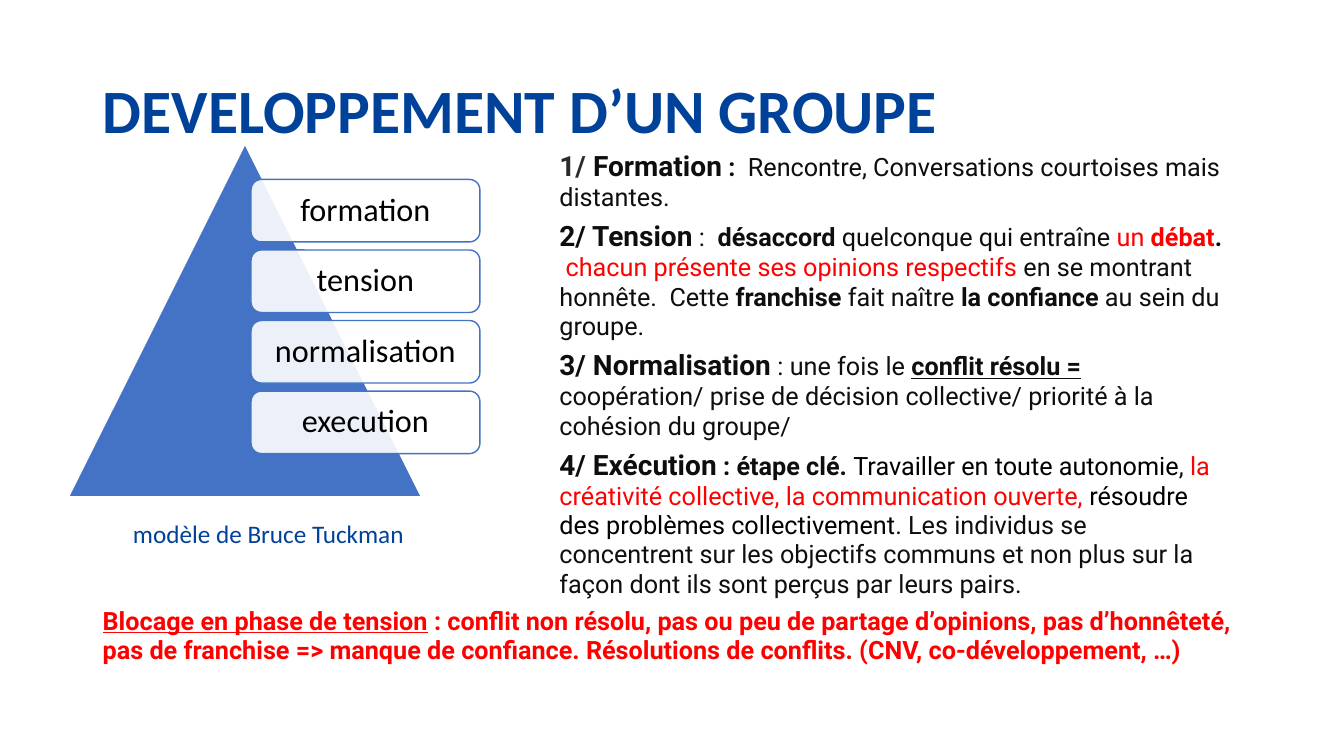
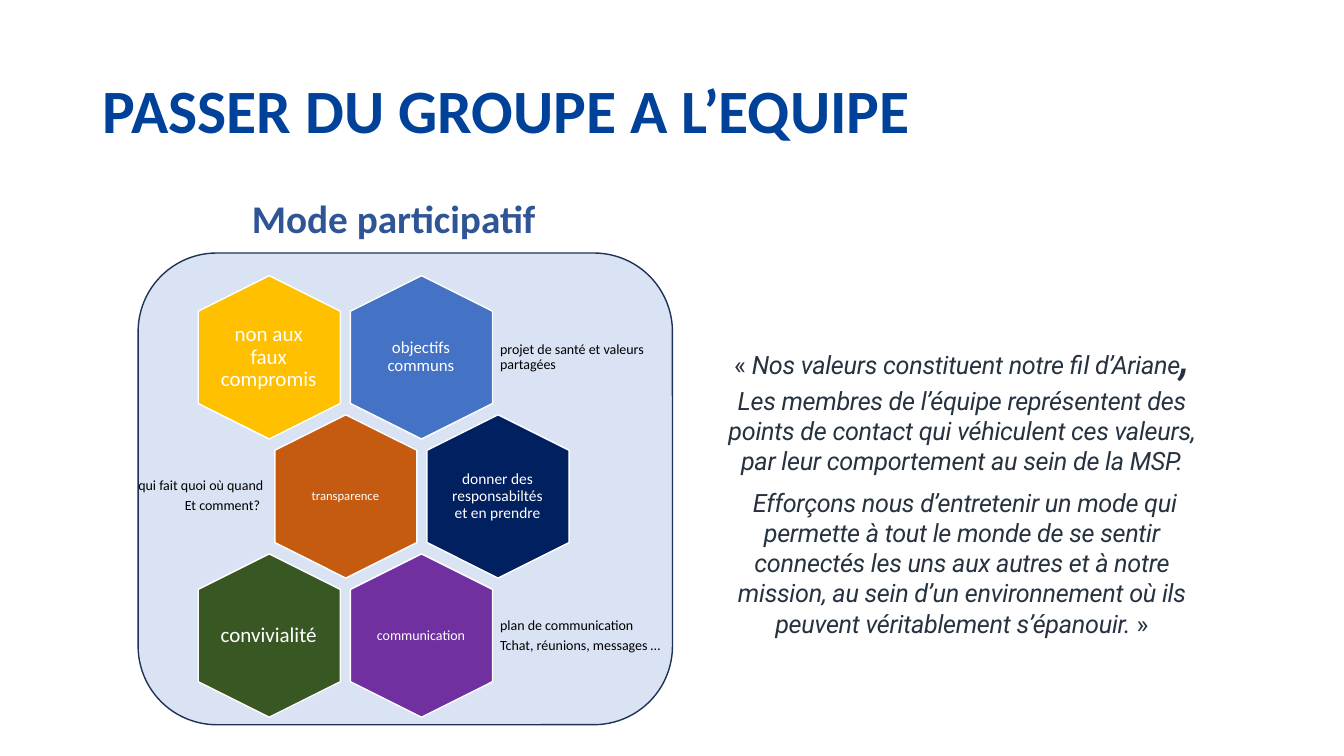
from lxml import etree
from pptx import Presentation
from pptx.dml.color import RGBColor
from pptx.enum.shapes import MSO_SHAPE
from pptx.enum.text import MSO_ANCHOR, MSO_AUTO_SIZE, PP_ALIGN
from pptx.oxml.ns import qn
from pptx.util import Inches, Pt

LEFT, MID, RIGHT = PP_ALIGN.LEFT, PP_ALIGN.CENTER, PP_ALIGN.RIGHT
TOP, CENTRE = MSO_ANCHOR.TOP, MSO_ANCHOR.MIDDLE
ROUND, HEX, PEAK = MSO_SHAPE.ROUNDED_RECTANGLE, MSO_SHAPE.HEXAGON, MSO_SHAPE.ISOSCELES_TRIANGLE

COLOR = {
    "title": "004199", "blue": "4472C4", "head": "2F5597", "white": "FFFFFF",
    "black": "000000", "ink": "0D0E10", "soft": "2A2B2C", "red": "FF0000",
    "slate": "273240", "pale": "DAE3F3", "edge": "1E3256", "gold": "FFC000",
    "rust": "C55A11", "navy": "002060", "plum": "7030A0", "green": "385723",
}
SANS, BODY = "Calibri", "Roboto"

# Content: a paragraph is a list of (text, style words)
PHASES = ["formation", "tension", "normalisation", "execution"]
MODEL = "modèle de Bruce Tuckman"
STEPS = [
    [("1/ ", "large bold soft"), ("Formation", "large bold"), (" :", "bold"),
     ("  Rencontre, Conversations courtoises mais distantes.", "")],
    [("2/ Tension", "large bold"), (" ", "bold"), (":  ", ""), ("désaccord ", "bold"),
     ("quelconque qui entraîne ", ""), ("un ", "red"), ("débat", "bold red"),
     (".  ", "bold"), ("chacun présente ses opinions respectifs ", "red"),
     ("en se montrant honnête.  Cette ", ""), ("franchise", "bold"),
     (" fait naître ", ""), ("la confiance", "bold"), (" au sein du groupe.", "")],
    [("3/ Normalisation", "large bold"), (" ", "bold"), (": une fois le ", ""),
     ("conflit résolu =", "bold under"),
     (" coopération/ prise de décision collective/ priorité à la cohésion du groupe/", "")],
    [("4/ Exécution", "large bold"), (" : étape clé. ", "bold"),
     ("Travailler en toute autonomie", "black"), (", ", ""),
     ("la créativité collective, la communication ouverte, ", "red"),
     ("résoudre des problèmes collectivement", "black"),
     (". Les individus se concentrent sur les objectifs communs et non plus sur la "
      "façon dont ils sont perçus par leurs pairs.", "")],
]
BLOCK = [[
    ("Blocage en phase de tension", "bold under"),
    (" : conflit non résolu, pas ou peu de partage d’opinions, pas d’honnêteté, pas de "
     "franchise => manque de confiance. Résolutions de conflits. (CNV, co-développement, …)",
     "bold"),
]]
MODE = "Mode participatif"
# Row, column, label, size, fill
CELLS = [
    (0, 0, "non aux faux compromis", 15, "gold"),
    (0, 1, "objectifs communs", 12, "blue"),
    (1, 0, "transparence", 9, "rust"),
    (1, 1, "donner des responsabiltés et en prendre", 11, "navy"),
    (2, 0, "convivialité", 15, "green"),
    (2, 1, "communication", 10, "plum"),
]
# Row, left, width, alignment, lines
NOTES = [
    (0, 4.92, 1.8, LEFT, ["projet de santé et valeurs partagées"]),
    (1, 0.9, 1.75, RIGHT, ["qui fait quoi où quand", "Et comment? "]),
    (2, 4.92, 1.8, LEFT, ["plan de communication", "Tchat, réunions, messages …"]),
]
QUOTE = [
    [("« ", ""), ("Nos valeurs constituent notre fil d’Ariane", "ital"), (", ", "ital huge"),
     ("Les membres de l’équipe représentent des points de contact qui véhiculent ces "
      "valeurs, par leur comportement au sein de la MSP.", "ital")],
    [(" Efforçons nous d’entretenir un mode qui permette à tout le monde de se sentir "
      "connectés les uns aux autres et à notre mission, au sein d’un environnement où ils "
      "peuvent véritablement s’épanouir.", "ital"), (" »", "")],
]


def rgb(name):
    return RGBColor.from_string(COLOR[name])


def set_font(font, size, color, face=SANS, bold=False):
    font.name, font.size, font.bold = face, Pt(size), bold
    font.color.rgb = rgb(color)


def set_frame(frame, anchor=TOP, pad=None):
    frame.word_wrap = True
    frame.auto_size = MSO_AUTO_SIZE.NONE
    frame.vertical_anchor = anchor
    if pad is not None:
        frame.margin_left = frame.margin_right = Inches(pad)
        frame.margin_top = frame.margin_bottom = Inches(pad)


def write(frame, lines, size, color, align=LEFT, bold=False, lead=None, after=0):
    for n, line in enumerate(lines):
        para = frame.paragraphs[0] if n == 0 else frame.add_paragraph()
        para.text, para.alignment = line, align
        para.line_spacing, para.space_after = lead, Pt(after)
        set_font(para.font, size, color, bold=bold)


def add_text(slide, box, lines, size, color, anchor=TOP, pad=None, **style):
    shape = slide.shapes.add_textbox(*map(Inches, box))
    set_frame(shape.text_frame, anchor, pad)
    write(shape.text_frame, lines, size, color, **style)
    return shape


def add_rich(slide, box, paras, color, align=LEFT, lead=None, track=0):
    frame = slide.shapes.add_textbox(*map(Inches, box)).text_frame
    set_frame(frame)
    for n, runs in enumerate(paras):
        para = frame.paragraphs[0] if n == 0 else frame.add_paragraph()
        para.alignment, para.line_spacing, para.space_after = align, lead, Pt(8)
        para.font.name = BODY
        for text, style in runs:
            words = style.split()
            run = para.add_run()
            run.text = text
            size = 36 if "huge" in words else 20 if "large" in words else 18
            tint = next((w for w in words if w in COLOR), color)
            set_font(run.font, size, tint, BODY, "bold" in words)
            run.font.italic = "ital" in words
            run.font.underline = "under" in words
            if track:
                run.font._element.set("spc", str(track))


def add_form(slide, kind, box, fill, line):
    shape = slide.shapes.add_shape(kind, *map(Inches, box))
    shape.shadow.inherit = False
    shape.fill.solid()
    shape.fill.fore_color.rgb = rgb(fill)
    shape.line.color.rgb = rgb(line)
    shape.line.width = Pt(1)
    return shape


def fade(shape, share):
    tint = shape.fill._xPr.find(qn("a:solidFill"))[0]
    etree.SubElement(tint, qn("a:alpha")).set("val", str(share * 1000))


def add_slide(deck, title):
    slide = deck.slides.add_slide(deck.slide_layouts[5])
    head = slide.shapes.title
    head.left, head.top, head.width, head.height = map(Inches, (0.92, 0.4, 11.5, 1.45))
    set_frame(head.text_frame, CENTRE)
    write(head.text_frame, [title], 44, "title", bold=True, lead=0.9)
    return slide


def build_group(deck):
    slide = add_slide(deck, "DEVELOPPEMENT D’UN GROUPE")
    # Pyramid and its phases
    add_form(slide, PEAK, (0.68, 1.43, 3.5, 3.5), "blue", "white")
    for n, phase in enumerate(PHASES):
        card = add_form(slide, ROUND, (2.49, 1.78 + 0.7 * n, 2.27, 0.62), "white", "blue")
        fade(card, 90)
        set_frame(card.text_frame, CENTRE, 0.1)
        write(card.text_frame, [phase], 23, "black", MID, lead=0.9)
    # Explanations
    add_rich(slide, (5.45, 1.47, 6.79, 4.27), STEPS, "ink", lead=Pt(21))
    add_rich(slide, (0.92, 5.96, 11.5, 0.69), BLOCK, "red", lead=Pt(21))
    add_text(slide, (1.22, 5.09, 6.79, 0.4), [MODEL], 18, "title")


def build_team(deck):
    slide = add_slide(deck, "PASSER DU GROUPE A L’EQUIPE")
    add_form(slide, ROUND, (1.37, 2.51, 5.3, 4.68), "pale", "edge")
    # Honeycomb: odd rows shift by half a column
    wide, high, top, step = 1.62, 1.41, 2.84, 1.38
    for row, col, label, size, fill in CELLS:
        x, y = 1.86 + 1.51 * col + 0.76 * (row % 2), top + step * row
        add_form(slide, HEX, (x, y, wide, high), fill, "white").rotation = 90
        add_text(slide, (x + 0.32, y + 0.15, 0.97, 1.11), [label], size, "white",
                 CENTRE, 0, align=MID, lead=0.9)
    for row, x, width, align, lines in NOTES:
        add_text(slide, (x, top + step * row + 0.22, width, 0.97), lines, 10, "black",
                 CENTRE, 0.04, align=align, lead=0.9, after=3.5)
    # Quotation and heading
    add_rich(slide, (7.04, 3.17, 5, 3.24), QUOTE, "slate", MID, track=-20)
    mode = add_text(slide, (2.4, 1.88, 3.05, 0.57), [MODE], 28, "head", bold=True)
    mode.text_frame.word_wrap = False


def main():
    deck = Presentation()
    deck.slide_width, deck.slide_height = Inches(13.33), Inches(7.5)
    build_group(deck)
    build_team(deck)
    deck.save("out.pptx")


if __name__ == "__main__":
    main()
